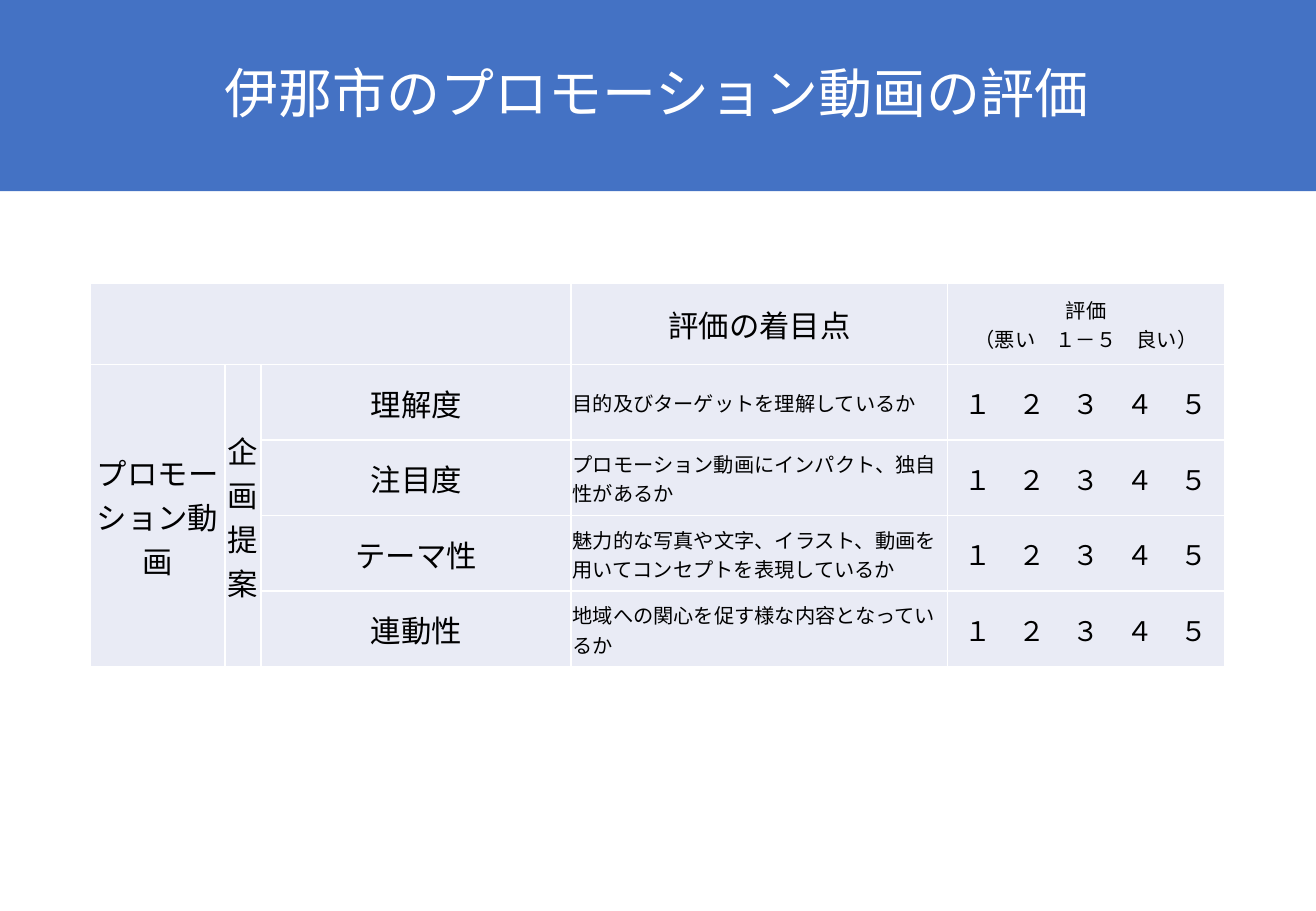
from pptx import Presentation
from pptx.dml.color import RGBColor
from pptx.enum import text
from pptx.oxml import ns
from pptx.util import Cm, Pt
from lxml import etree

FONT = "Noto Sans CJK JP"
BLUE, PALE, WHITE, BLACK = "4472C4", "E9EBF5", "FFFFFF", "000000"

COLUMN_WIDTHS = [2.82, 0.76, 6.48, 7.87, 5.79]
HEADER_HEIGHT, CRITERION_HEIGHT = 1.7, 1.58
SCALE = "１　２　３　４　５"
CRITERIA = [
    ("理解度", "目的及びターゲットを理解しているか"),
    ("注目度", "プロモーション動画にインパクト、独自性があるか"),
    ("テーマ性", "魅力的な写真や文字、イラスト、動画を用いてコンセプトを表現しているか"),
    ("連動性", "地域への関心を促す様な内容となっているか"),
]


def colour(value):
    return RGBColor.from_string(value)


def fill_solid(target, value):
    target.fill.solid()
    target.fill.fore_color.rgb = colour(value)


def format_text(frame, size, value, align):
    for paragraph in frame.paragraphs:
        paragraph.alignment = align
        for run in paragraph.runs:
            run.font.size = Pt(size)
            run.font.name = FONT
            run.font.color.rgb = colour(value)
            east_asian = etree.SubElement(run.font._element, ns.qn("a:ea"))
            east_asian.set("typeface", FONT)


def add_borders(cell):
    properties = cell._tc.get_or_add_tcPr()
    for side in ("lnL", "lnR", "lnT", "lnB"):
        line = etree.SubElement(properties, ns.qn(f"a:{side}"), w=str(Pt(1)))
        solid = etree.SubElement(line, ns.qn("a:solidFill"))
        etree.SubElement(solid, ns.qn("a:srgbClr"), val=WHITE)


def style_cell(cell):
    add_borders(cell)
    fill_solid(cell, PALE)
    cell.vertical_anchor = text.MSO_ANCHOR.MIDDLE
    cell.margin_left = cell.margin_right = cell.margin_top = Cm(0.03)
    cell.margin_bottom = 0


def write_cell(cell, wording, size, align=text.PP_ALIGN.CENTER, vertical=False):
    cell.text_frame.text = wording
    format_text(cell.text_frame, size, BLACK, align)
    if vertical:
        cell._tc.get_or_add_tcPr().set("vert", "eaVert")


def set_title(slide, wording):
    title = slide.shapes.title
    title.left, title.top, title.width, title.height = Cm(-0.05), 0, Cm(27.56), Cm(4)
    fill_solid(title, BLUE)
    frame = title.text_frame
    frame.text = wording
    frame.auto_size = text.MSO_AUTO_SIZE.NONE
    frame.vertical_anchor = text.MSO_ANCHOR.MIDDLE
    frame.paragraphs[0].line_spacing = 0.9
    format_text(frame, 32, WHITE, text.PP_ALIGN.CENTER)


def add_evaluation_table(slide):
    row_heights = [HEADER_HEIGHT] + [CRITERION_HEIGHT] * len(CRITERIA)
    table = slide.shapes.add_table(
        len(row_heights), len(COLUMN_WIDTHS), Cm(1.88), Cm(5.92),
        Cm(sum(COLUMN_WIDTHS)), Cm(sum(row_heights))).table
    table.first_row = table.horz_banding = False
    for column, width in zip(table.columns, COLUMN_WIDTHS):
        column.width = Cm(width)
    for row, height in zip(table.rows, row_heights):
        row.height = Cm(height)
    for cell in table.iter_cells():
        style_cell(cell)

    table.cell(0, 0).merge(table.cell(0, 2))
    write_cell(table.cell(0, 3), "評価の着目点", 18)
    write_cell(table.cell(0, 4), "評価\n（悪い　１－５　良い）", 12)
    for column, group in enumerate(["プロモーション動画", "企画提案"]):
        table.cell(1, column).merge(table.cell(len(CRITERIA), column))
        write_cell(table.cell(1, column), group, 18, vertical=True)
    for row, (criterion, viewpoint) in enumerate(CRITERIA, start=1):
        write_cell(table.cell(row, 2), criterion, 18)
        write_cell(table.cell(row, 3), viewpoint, 12, text.PP_ALIGN.LEFT)
        write_cell(table.cell(row, 4), SCALE, 16)


def main():
    presentation = Presentation()
    presentation.slide_width, presentation.slide_height = Cm(27.51), Cm(19.05)
    slide = presentation.slides.add_slide(presentation.slide_layouts[5])
    set_title(slide, "伊那市のプロモーション動画の評価")
    add_evaluation_table(slide)
    presentation.save("out.pptx")


if __name__ == "__main__":
    main()
